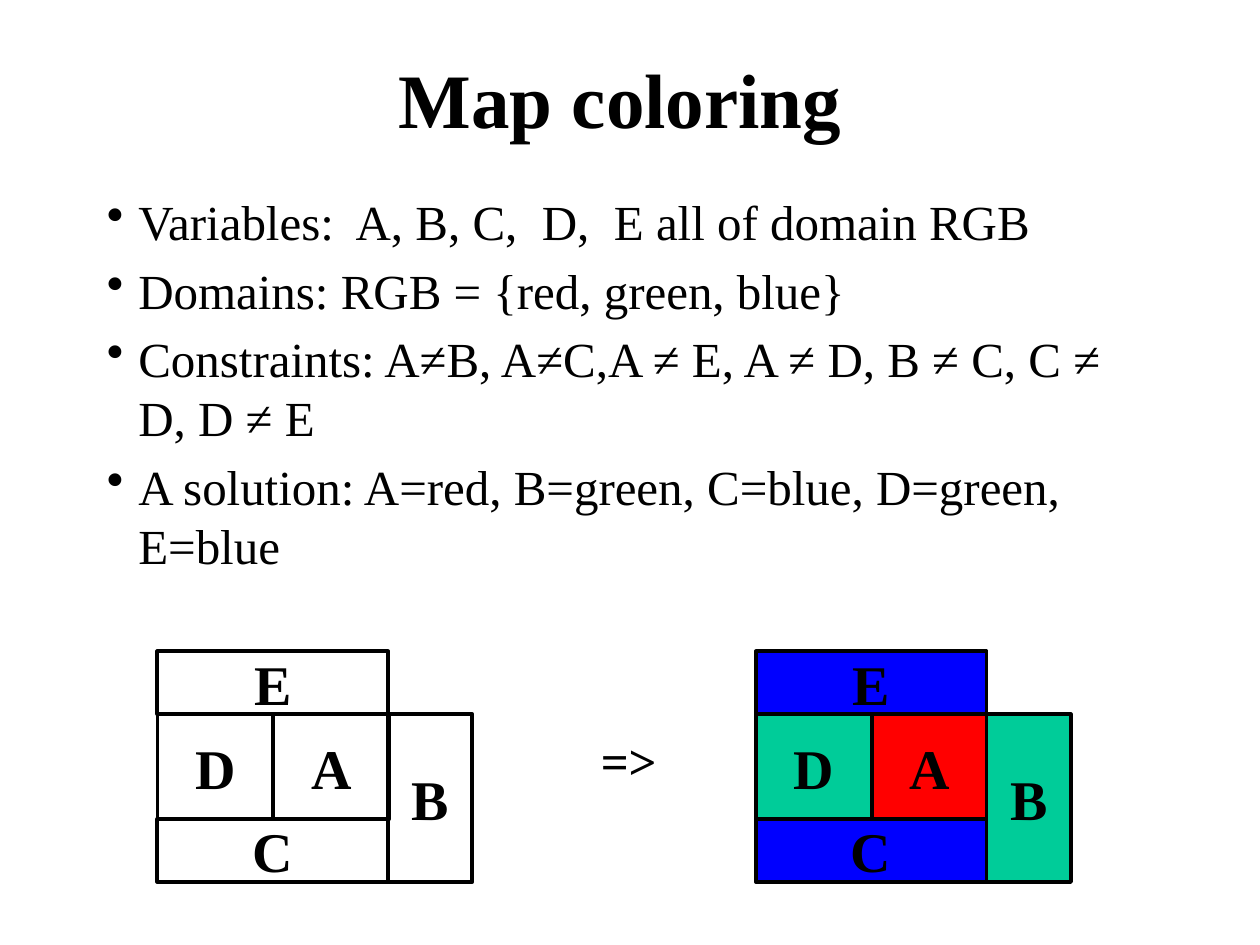
from lxml import etree
from pptx import Presentation
from pptx.dml.color import RGBColor
from pptx.enum.shapes import MSO_SHAPE as SHAPE
from pptx.enum.text import MSO_ANCHOR as ANCHOR, PP_ALIGN as ALIGN
from pptx.oxml.ns import qn
from pptx.util import Inches, Pt

COLORS = {"ink": "000000", "red": "FF0000", "green": "00CC99", "blue": "0000FF"}

# Region: left, top, width, height, measured from the map's corner
REGIONS = {
    "E": (0, 0, 1.83, 0.5),
    "D": (0, 0.5, 0.92, 0.83),
    "A": (0.92, 0.5, 0.92, 0.83),
    "C": (0, 1.33, 1.83, 0.5),
    "B": (1.83, 0.5, 0.67, 1.33),
}
SOLUTION = {"A": "red", "B": "green", "C": "blue", "D": "green", "E": "blue"}
BULLETS = [
    "Variables:  A, B, C,  D,  E all of domain RGB",
    "Domains: RGB = {red, green, blue}",
    "Constraints: A≠B, A≠C,A ≠ E, A ≠ D, B ≠ C, C ≠ D, D ≠ E",
    "A solution: A=red, B=green, C=blue, D=green, E=blue",
]


class SlideBuilder:
    font = "Times New Roman"

    def __init__(self, slide):
        self.slide = slide

    def color(self, name):
        return RGBColor.from_string(COLORS[name])

    def run(self, p, text, size, bold=False):
        r = p.add_run()
        r.text = text
        r.font.name = self.font
        r.font.size = Pt(size)
        r.font.bold = bold
        r.font.color.rgb = self.color("ink")

    def title(self, text, left, top, width, height):
        sp = self.slide.shapes.title
        sp.left, sp.top = Inches(left), Inches(top)
        sp.width, sp.height = Inches(width), Inches(height)
        tf = sp.text_frame
        tf.vertical_anchor = ANCHOR.MIDDLE
        p = tf.paragraphs[0]
        p.alignment = ALIGN.CENTER
        self.run(p, text, 44, bold=True)

    def text_box(self, left, top, width, height, wrap):
        sp = self.slide.shapes.add_textbox(
            Inches(left), Inches(top), Inches(width), Inches(height))
        sp.text_frame.word_wrap = wrap
        return sp.text_frame

    def bullets(self, items, left, top, width, height):
        tf = self.text_box(left, top, width, height, wrap=True)
        for i, item in enumerate(items):
            p = tf.add_paragraph() if i else tf.paragraphs[0]
            p.space_before = Pt(5.6)
            pPr = p._p.get_or_add_pPr()
            pPr.set("marL", str(Inches(0.25)))
            pPr.set("indent", str(-Inches(0.25)))
            etree.SubElement(pPr, qn("a:buChar")).set("char", "•")
            self.run(p, item, 28)

    def label(self, text, left, top, width, height):
        tf = self.text_box(left, top, width, height, wrap=False)
        self.run(tf.paragraphs[0], text, 28, bold=True)

    def region(self, group, name, left, top, width, height, fill):
        sp = group.shapes.add_shape(
            SHAPE.RECTANGLE, Inches(left), Inches(top), Inches(width), Inches(height))
        sp.shadow.inherit = False
        if fill:
            sp.fill.solid()
            sp.fill.fore_color.rgb = self.color(fill)
        else:
            sp.fill.background()
        sp.line.color.rgb = self.color("ink")
        sp.line.width = Pt(2.25)
        tf = sp.text_frame
        tf.word_wrap = False
        tf.vertical_anchor = ANCHOR.MIDDLE
        p = tf.paragraphs[0]
        p.alignment = ALIGN.CENTER
        self.run(p, name, 32, bold=True)

    def region_map(self, left, top, fills):
        group = self.slide.shapes.add_group_shape()
        for name, (x, y, width, height) in REGIONS.items():
            self.region(group, name, left + x, top + y, width, height, fills.get(name))


def main():
    prs = Presentation()
    prs.slide_width, prs.slide_height = Inches(10), Inches(7.5)
    s = SlideBuilder(prs.slides.add_slide(prs.slide_layouts[5]))

    # Heading and problem statement
    s.title("Map coloring ", 0.75, 0.15, 8.5, 1.25)
    s.bullets(BULLETS, 0.75, 1.47, 8.5, 4.5)

    # Blank map, arrow and solved map
    s.region_map(1.25, 5.17, {})
    s.region_map(6, 5.17, SOLUTION)
    s.label("=>", 4.67, 5.75, 0.65, 0.57)

    prs.save("out.pptx")


if __name__ == "__main__":
    main()
